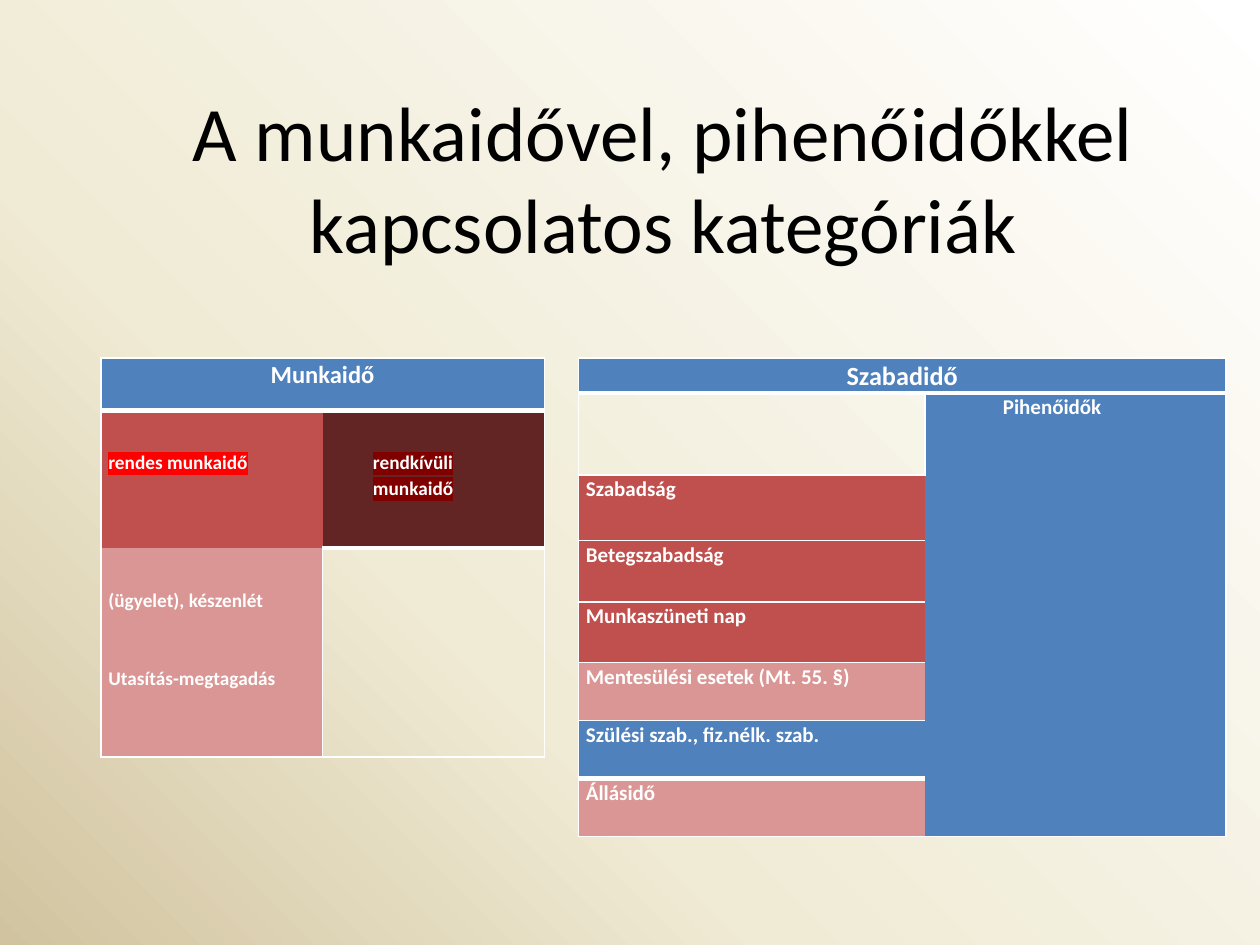
"""Build the slide on working time and rest time categories."""
from copy import deepcopy
from lxml import etree
from pptx import Presentation
from pptx.dml.color import RGBColor
from pptx.enum.text import MSO_ANCHOR as Anchor, MSO_AUTO_SIZE as Fit, PP_ALIGN as Align
from pptx.oxml.ns import qn
from pptx.util import Inches, Pt

WHITE, BLUE, RED, PINK, DARK = "FFFFFF", "4F81BD", "C0504D", "D99694", "632523"


def tint(code):
    return RGBColor.from_string(code)


def edge(props, sides):
    for spot, side in enumerate("lrtb"):
        bold = side.upper() in sides
        seen = bold or side in sides
        line = etree.Element(qn(f"a:ln{side.upper()}"), w=str(Pt(3 if bold else 1)))
        fill = etree.SubElement(line, qn("a:solidFill" if seen else "a:noFill"))
        if seen:
            etree.SubElement(fill, qn("a:srgbClr"), val=WHITE)
        props.insert(spot, line)


deck = Presentation()
deck.slide_width, deck.slide_height = Inches(10), Inches(7.5)
slide = deck.slides.add_slide(deck.slide_layouts[5])

back = slide.background.fill
back.gradient()
back.gradient_angle = 225
stops = slide.element.find(".//" + qn("a:gsLst"))
stops.append(deepcopy(stops[-1]))
for stop, (place, code) in zip(back.gradient_stops, [(0, WHITE), (0.65, "F0EBD5"), (1, "D1C39F")]):
    stop.position = place
    stop.color.rgb = tint(code)

title = slide.shapes.title
box = {"left": 1.14, "top": 0.84, "width": 8.25, "height": 1.12}
for name, value in box.items():
    setattr(title, name, Inches(value))
frame = title.text_frame
frame.text = "A munkaidővel, pihenőidőkkel kapcsolatos kategóriák"
frame.auto_size, frame.vertical_anchor = Fit.NONE, Anchor.MIDDLE
head = frame.paragraphs[0]
head.alignment = Align.CENTER
for name, value in {"size": Pt(44), "name": "Calibri"}.items():
    setattr(head.runs[0].font, name, value)
head.runs[0].font.color.rgb = tint("000000")

work = [
    [("Munkaidő", BLUE, "ltrB"), ("", BLUE, "ltrB")],
    [("rendes munkaidő", RED, "lT"), ("rendkívüli munkaidő", DARK, "TrB")],
    [("(ügyelet), készenlét\nUtasítás-megtagadás", PINK, "lrb"), ("", None, "lTrb")],
]
leave = [("Szabadság", RED, "ltb"), ("Betegszabadság", RED, "ltb"),
         ("Munkaszüneti nap", RED, "ltb"), ("Mentesülési esetek (Mt. 55. §)", PINK, "ltb"),
         ("Szülési szab., fiz.nélk. szab.", BLUE, "ltB"), ("Állásidő", PINK, "lTb")]
free = [
    [("Szabadidő", BLUE, "ltrB"), ("", BLUE, "ltrB")],
    [("", None, "lTrb"), ("Pihenőidők", BLUE, "lTr")],
] + [[item, ("", BLUE, "rb")] for item in leave]

marks = {"rendes munkaidő": "FF0000", "rendkívüli munkaidő": "800000"}
shifts = {"rendkívüli munkaidő": 0.34, "Pihenőidők": 0.56}
tables = [
    (0.8, [1.76, 1.76], [0.42, 1.09, 1.66], work, 14, 11, 0.31),
    (4.59, [2.75, 2.39], [0.28, 0.65, 0.52, 0.49, 0.48, 0.46, 0.46, 0.46], free, 15, 12, 0),
]
for left, cols, rows, data, large, small, drop in tables:
    shape = slide.shapes.add_table(len(rows), 2, Inches(left), Inches(2.84),
                                   Inches(sum(cols)), Inches(sum(rows)))
    grid = shape.table
    grid.first_row = grid.horz_banding = False
    for col, width in zip(grid.columns, cols):
        col.width = Inches(width)
    for row, height in zip(grid.rows, rows):
        row.height = Inches(height)
    grid.cell(0, 0).merge(grid.cell(0, 1))
    if data is free:
        grid.cell(2, 1).merge(grid.cell(7, 1))

    nodes = shape.element.iter(qn("a:tc"))
    for spot, (cell, node) in enumerate(zip(grid.iter_cells(), nodes)):
        text, code, sides = data[spot // 2][spot % 2]
        top = spot < 2
        pads = {"left": 0.06 + shifts.get(text, 0), "right": 0.06,
                "top": 0 if top else drop, "bottom": 0}
        for name, value in pads.items():
            setattr(cell, "margin_" + name, Inches(value))
        edge(node.find(qn("a:tcPr")), sides)
        if code:
            cell.fill.solid()
            cell.fill.fore_color.rgb = tint(code)
        else:
            cell.fill.background()
        if not text:
            continue
        cell.text_frame.text = text
        for turn, para in enumerate(cell.text_frame.paragraphs):
            style = {"alignment": Align.CENTER if top else Align.JUSTIFY, "line_spacing": 1.07,
                     "space_before": Pt(22.4 if turn else 0),
                     "space_after": Pt(8 if top or data is work else 0)}
            for name, value in style.items():
                setattr(para, name, value)
            run = para.runs[0]
            face = {"size": Pt(large if top else small), "name": "Calibri", "bold": True}
            for name, value in face.items():
                setattr(run.font, name, value)
            run.font.color.rgb = tint(WHITE)
            if text in marks:
                glow = etree.Element(qn("a:highlight"))
                etree.SubElement(glow, qn("a:srgbClr"), val=marks[text])
                node.find(".//" + qn("a:latin")).addprevious(glow)

deck.save("out.pptx")
